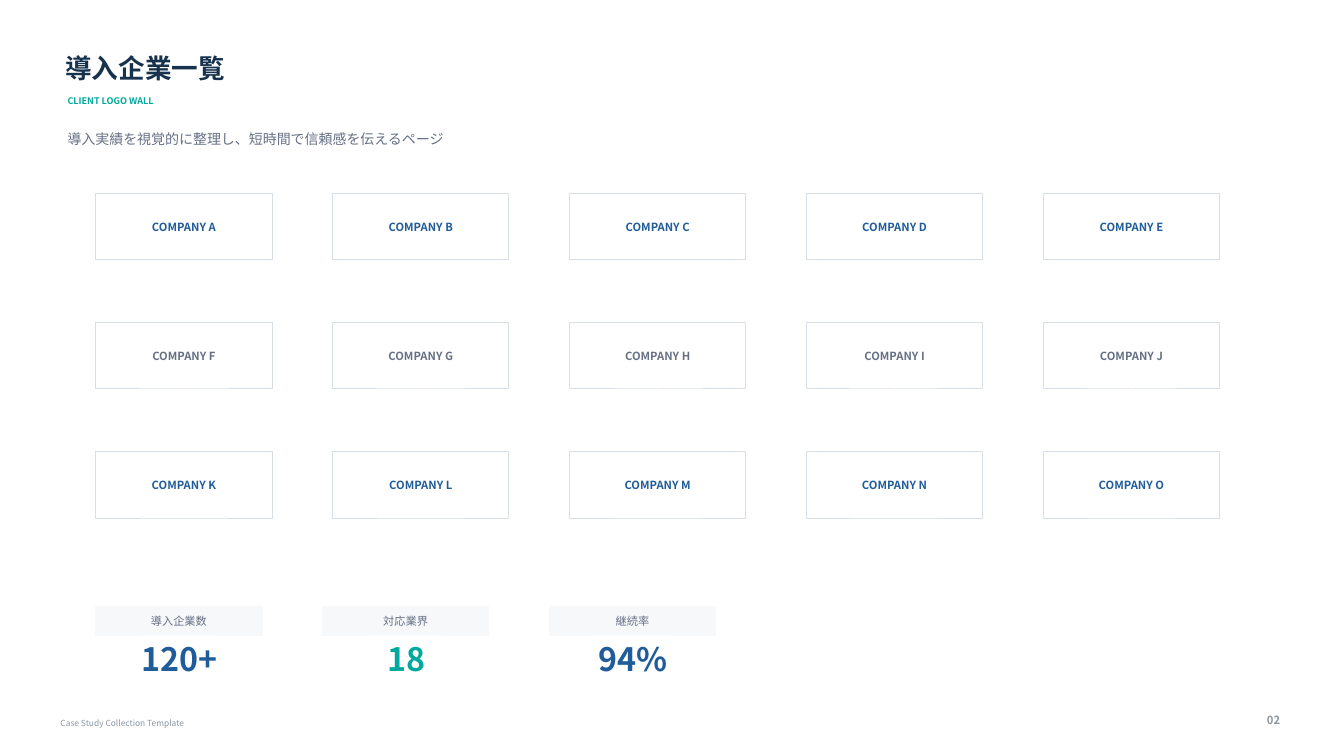
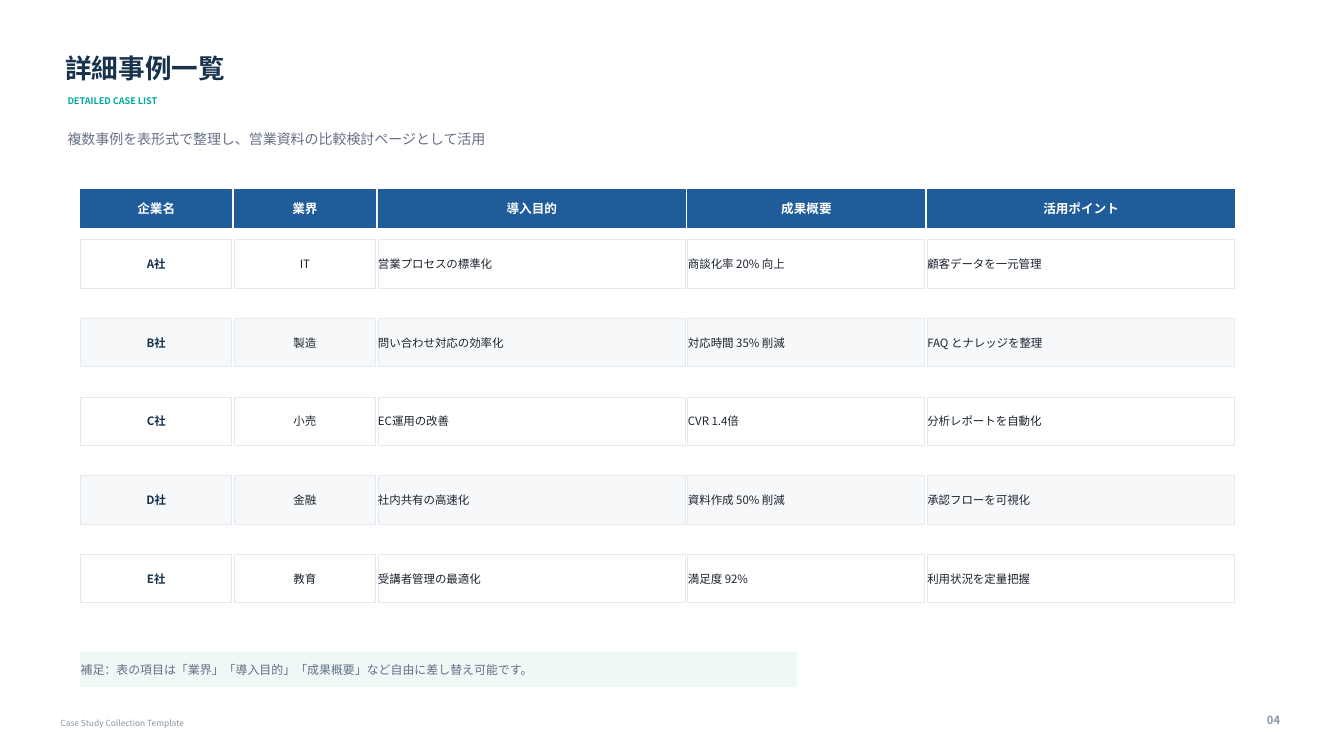
import pptx
import pptx.dml.color
import pptx.enum.shapes
import pptx.enum.text
import pptx.oxml
import pptx.oxml.ns
import pptx.util
from pptx.util import Pt

FONT = "Noto Sans CJK JP"
NAVY, BLUE, TEAL = "17324D", "1F5C99", "00A99D"
INK, SLATE, MUTED = "1B2430", "667085", "8A96A3"
WHITE, PALE, MINT = "FFFFFF", "F6F8FA", "EEF8F7"
CARD_EDGE, CELL_EDGE = "D7DEE6", "E4EAF0"
ALIGN = pptx.enum.text.PP_ALIGN


def rgb(hex_code):
    return pptx.dml.color.RGBColor.from_string(hex_code)


def add_text(slide, text, left, top, width, height, size=8, color=INK,
             bold=False, align=ALIGN.LEFT, fill=None, edge=None):
    """Add a text box, or a rectangle when a fill is given; edge defaults to the fill."""
    frame = tuple(Pt(v) for v in (left, top, width, height))
    if fill:
        box = slide.shapes.add_shape(pptx.enum.shapes.MSO_SHAPE.RECTANGLE, *frame)
        box.shadow.inherit = False
        box.fill.solid()
        box.fill.fore_color.rgb = rgb(fill)
        box.line.color.rgb = rgb(edge or fill)
        box.line.width = Pt(0.7)
    else:
        box = slide.shapes.add_textbox(*frame)
    body = box.text_frame
    body.word_wrap = True
    body.vertical_anchor = pptx.enum.text.MSO_ANCHOR.MIDDLE
    body.margin_left = body.margin_right = body.margin_top = body.margin_bottom = 0
    paragraph = body.paragraphs[0]
    paragraph.alignment = align
    run = paragraph.add_run()
    run.text = text
    run.font.name = FONT
    run.font.size = Pt(size)
    run.font.bold = bold
    run.font.color.rgb = rgb(color)
    east_asian = pptx.oxml.parse_xml(
        f'<a:ea {pptx.oxml.ns.nsdecls("a")} typeface="{FONT}"/>')
    run.font._element.find(pptx.oxml.ns.qn("a:latin")).addnext(east_asian)


prs = pptx.Presentation()
prs.slide_width, prs.slide_height = Pt(960), Pt(540)

# Headings and footers shared by both slides
headings = [
    ("導入企業一覧", "CLIENT LOGO WALL",
     "導入実績を視覚的に整理し、短時間で信頼感を伝えるページ", 468, "02"),
    ("詳細事例一覧", "DETAILED CASE LIST",
     "複数事例を表形式で整理し、営業資料の比較検討ページとして活用", 518.4, "04"),
]
for title, label, lead, lead_width, number in headings:
    slide = prs.slides.add_slide(prs.slide_layouts[6])
    slide.background.fill.solid()
    slide.background.fill.fore_color.rgb = rgb(WHITE)
    add_text(slide, title, 46.8, 33.12, 460.8, 30.24, size=19, color=NAVY, bold=True)
    add_text(slide, label, 48.24, 66.24, 345.6, 12.24, size=6.5, color=TEAL, bold=True)
    add_text(slide, lead, 48.24, 90, lead_width, 18, size=10, color=SLATE)
    add_text(slide, "Case Study Collection Template", 43.2, 509.76, 252, 12.96,
             size=6, color=MUTED)
    add_text(slide, number, 889.2, 505.44, 25.2, 18, color=MUTED, bold=True,
             align=ALIGN.RIGHT)
client_wall, case_list = prs.slides

# Client wall: 3 rows of 5 companies
for i, letter in enumerate("ABCDEFGHIJKLMNO"):
    row, column = divmod(i, 5)
    add_text(client_wall, f"COMPANY {letter}", 68.4 + 169.2 * column,
             138.24 + 92.16 * row, 126, 47.52, bold=True, align=ALIGN.CENTER,
             color=SLATE if row == 1 else BLUE, fill=WHITE, edge=CARD_EDGE)

# Key figures
figures = [("導入企業数", "120+", BLUE), ("対応業界", "18", TEAL), ("継続率", "94%", BLUE)]
for i, (caption, value, color) in enumerate(figures):
    left = 68.4 + 162 * i
    add_text(client_wall, caption, left, 433.44, 118.8, 20.16, color=SLATE,
             align=ALIGN.CENTER, fill=PALE)
    add_text(client_wall, value, left + 5.76, 456.48, 108, 27.36, size=23,
             color=color, bold=True, align=ALIGN.CENTER)

# Case list: separate cells, with wide gaps between the rows
column_names = ["企業名", "業界", "導入目的", "成果概要", "活用ポイント"]
column_widths = [108, 100.8, 219.6, 169.2, 219.6]
column_gap = 1.8
cases = [
    ("A社", "IT", "営業プロセスの標準化", "商談化率 20% 向上", "顧客データを一元管理"),
    ("B社", "製造", "問い合わせ対応の効率化", "対応時間 35% 削減", "FAQ とナレッジを整理"),
    ("C社", "小売", "EC運用の改善", "CVR 1.4倍", "分析レポートを自動化"),
    ("D社", "金融", "社内共有の高速化", "資料作成 50% 削減", "承認フローを可視化"),
    ("E社", "教育", "受講者管理の最適化", "満足度 92%", "利用状況を定量把握"),
]
left = 57.6
for column, (name, width) in enumerate(zip(column_names, column_widths)):
    add_text(case_list, name, left, 135.36, width, 27.36, size=9, color=WHITE,
             bold=True, align=ALIGN.CENTER, fill=BLUE)
    for row, case in enumerate(cases):
        add_text(case_list, case[column], left, 171.36 + 56.16 * row, width, 34.56,
                 size=8.2, color=NAVY if column == 0 else INK, bold=column == 0,
                 align=ALIGN.CENTER if column < 2 else ALIGN.LEFT,
                 fill=PALE if row % 2 else WHITE, edge=CELL_EDGE)
    left += width + column_gap

add_text(case_list, "補足：表の項目は「業界」「導入目的」「成果概要」など自由に差し替え可能です。",
         57.6, 465.84, 511.2, 24.48, size=8.5, color=SLATE, fill=MINT)

prs.save("out.pptx")
